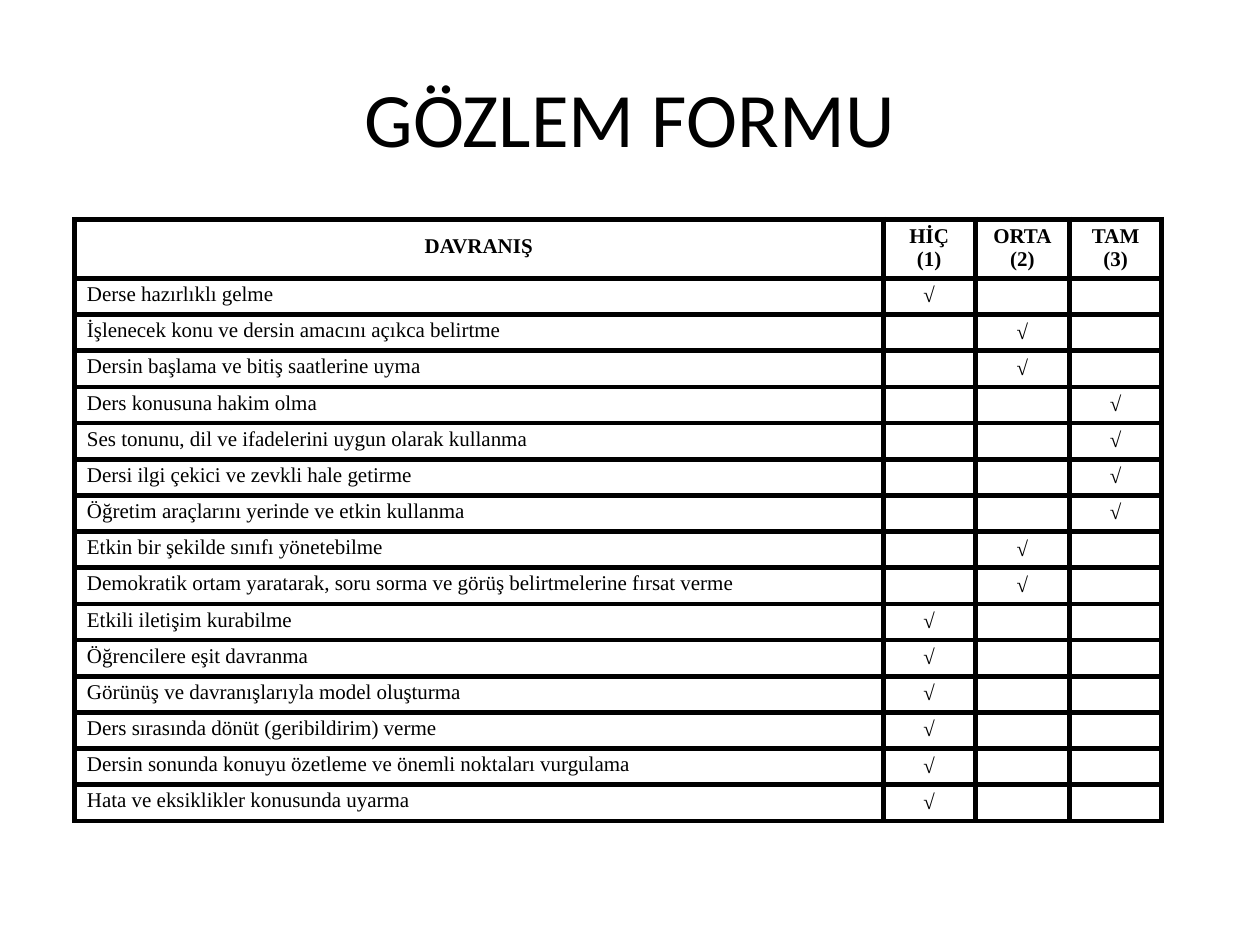
"""Build the observation form slide: a title above a behaviour rating table."""
from lxml import etree
from pptx import Presentation
from pptx import util as u
from pptx.dml.color import RGBColor
from pptx.enum import text
from pptx.oxml import ns

TITLE = "GÖZLEM FORMU"
HEADERS = ["DAVRANIŞ", "HİÇ\n(1)", "ORTA\n(2)", "TAM\n(3)"]
RATINGS = [
    ("Derse hazırlıklı gelme", 1),
    ("İşlenecek konu ve dersin amacını açıkca belirtme", 2),
    ("Dersin başlama ve bitiş saatlerine uyma", 2),
    ("Ders konusuna hakim olma", 3),
    ("Ses tonunu, dil ve ifadelerini uygun olarak kullanma", 3),
    ("Dersi ilgi çekici ve zevkli hale getirme", 3),
    ("Öğretim araçlarını yerinde ve etkin kullanma", 3),
    ("Etkin bir şekilde sınıfı yönetebilme", 2),
    ("Demokratik ortam yaratarak, soru sorma ve görüş belirtmelerine fırsat verme", 2),
    ("Etkili iletişim kurabilme", 1),
    ("Öğrencilere eşit davranma", 1),
    ("Görünüş ve davranışlarıyla model oluşturma", 1),
    ("Ders sırasında dönüt (geribildirim) verme", 1),
    ("Dersin sonunda konuyu özetleme ve önemli noktaları vurgulama", 1),
    ("Hata ve eksiklikler konusunda uyarma", 1),
]
MARK = "√"
COLORS = {"ink": "000000", "paper": "FFFFFF"}
TITLE_FONT = {"name": "Calibri", "size": u.Pt(44)}
BODY_FONT = {"name": "Times New Roman", "size": u.Pt(12), "bold": False}
HEADER_FONT = {**BODY_FONT, "bold": True}
COLUMNS = [6.42, 0.73, 0.75, 0.73]
LEFT, TOP, HEIGHT, HEADER_HEIGHT = 0.59, 1.74, 4.78, 0.47
CELL_FORMAT = {
    "margin_top": u.Inches(0.03),
    "margin_bottom": u.Inches(0.04),
    "vertical_anchor": text.MSO_ANCHOR.MIDDLE,
}
BORDER_WIDTH = u.Pt(3)


def apply(target, values):
    for name, value in values.items():
        setattr(target, name, value)


def write(frame, content, font, align, spacing=None):
    frame.text = content
    for para in frame.paragraphs:
        apply(para, {"alignment": align, "line_spacing": spacing})
        for span in para.runs:
            apply(span.font, font)
            span.font.color.rgb = RGBColor.from_string(COLORS["ink"])
        if not content:
            para._p.get_or_add_endParaRPr().set("sz", str(int(font["size"].pt * 100)))


def add_borders(cell):
    properties = cell._tc.get_or_add_tcPr()
    for index, side in enumerate(("lnL", "lnR", "lnT", "lnB")):
        line = etree.Element(ns.qn(f"a:{side}"), w=str(BORDER_WIDTH))
        fill = etree.SubElement(line, ns.qn("a:solidFill"))
        etree.SubElement(fill, ns.qn("a:srgbClr"), val=COLORS["ink"])
        properties.insert(index, line)


def add_title(page):
    box = page.shapes.add_textbox(u.Inches(0.5), u.Inches(0.3), u.Inches(9), u.Inches(1.25))
    apply(box.text_frame, {"word_wrap": True, "vertical_anchor": text.MSO_ANCHOR.MIDDLE})
    write(box.text_frame, TITLE, TITLE_FONT, text.PP_ALIGN.CENTER)


def add_form(page):
    rows = [HEADERS] + [
        [behaviour] + [MARK if score == rating else "" for score in (1, 2, 3)]
        for behaviour, rating in RATINGS
    ]
    table = page.shapes.add_table(
        len(rows), len(COLUMNS), u.Inches(LEFT), u.Inches(TOP),
        u.Inches(sum(COLUMNS)), u.Inches(HEIGHT),
    ).table
    for column, width in zip(table.columns, COLUMNS):
        column.width = u.Inches(width)
    row_height = (HEIGHT - HEADER_HEIGHT) / len(RATINGS)
    for r, values in enumerate(rows):
        table.rows[r].height = u.Inches(row_height if r else HEADER_HEIGHT)
        for c, content in enumerate(values):
            cell = table.cell(r, c)
            apply(cell, CELL_FORMAT)
            cell.fill.solid()
            cell.fill.fore_color.rgb = RGBColor.from_string(COLORS["paper"])
            add_borders(cell)
            align = text.PP_ALIGN.LEFT if r and c == 0 else text.PP_ALIGN.CENTER
            font = BODY_FONT if r else HEADER_FONT
            write(cell.text_frame, content, font, align, 0.8 if c == 0 else None)


def main():
    deck = Presentation()
    apply(deck, {"slide_width": u.Inches(10), "slide_height": u.Inches(7.5)})
    page = deck.slides.add_slide(deck.slide_layouts[6])
    add_title(page)
    add_form(page)
    deck.save("out.pptx")


if __name__ == "__main__":
    main()
